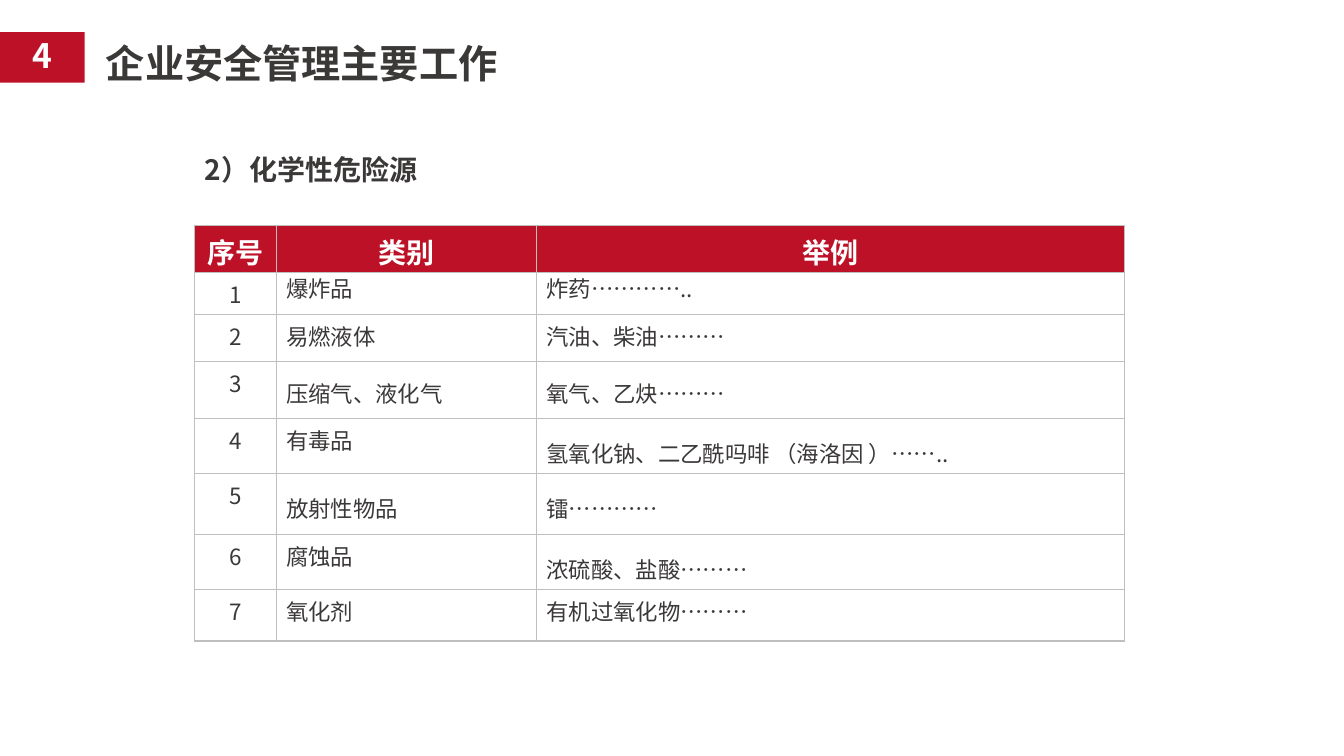
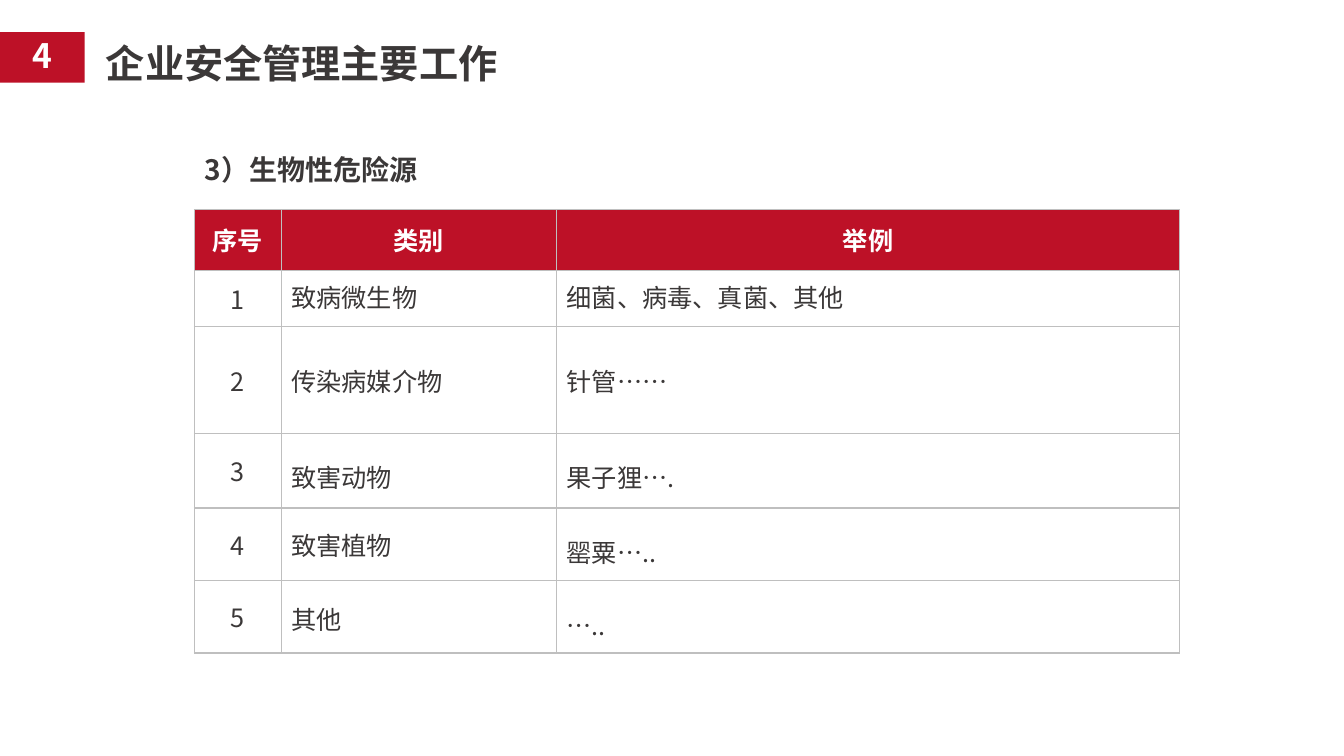
import dataclasses

import lxml.etree
import pptx
import pptx.dml.color
import pptx.enum.shapes
import pptx.enum.text
import pptx.oxml.ns
import pptx.util

Inches = pptx.util.Inches
Align = pptx.enum.text.PP_ALIGN
Anchor = pptx.enum.text.MSO_ANCHOR
qn = pptx.oxml.ns.qn


@dataclasses.dataclass(frozen=True)
class Theme:
    font: str = "Noto Sans CJK SC"
    red: str = "BD1127"
    ink: str = "3B3838"
    white: str = "FFFFFF"
    rule: str = "BFBFBF"
    title: int = 28
    badge: int = 24
    head: int = 20
    line: int = 1


THEME = Theme()
TITLE = "企业安全管理主要工作"
PART = "4"
HEADS = ("序号", "类别", "举例")

SLIDES = (
    dict(
        head="2）化学性危险源",
        box=(1.93, 2.24), cols=(0.81, 2.58, 5.83),
        sizes=(20, 16), top=0.46, foot=0, anchor=Anchor.TOP,
        rows=(
            (0.42, ("爆炸品", 0.8), ("炸药…………..", 0.8)),
            (0.47, ("易燃液体", 1), ("汽油、柴油………", 1)),
            (0.56, ("压缩气、液化气", 1.3), ("氧气、乙炔………", 1.3)),
            (0.55, ("有毒品", 1), ("氢氧化钠、二乙酰吗啡 （海洛因 ）……..", 1.4)),
            (0.6, ("放射性物品", 1.4), ("镭…………", 1.4)),
            (0.55, ("腐蚀品", 1), ("浓硫酸、盐酸………", 1.4)),
            (0.51, ("氧化剂", 1), ("有机过氧化物………", 1)),
        ),
    ),
    dict(
        head="3）生物性危险源",
        box=(1.93, 2.08), cols=(0.86, 2.73, 6.18),
        sizes=(18, 18), top=0.6, foot=0.05, anchor=Anchor.MIDDLE,
        rows=(
            (0.56, ("致病微生物", 0.8), ("细菌、病毒、真菌、其他", 0.8)),
            (1.06, ("传染病媒介物", 1), ("针管……", 1)),
            (0.74, ("致害动物", 1.3), ("果子狸….", 1.3)),
            (0.72, ("致害植物", 1), ("罂粟…..", 1.4)),
            (0.72, ("其他", 1.1), ("…..", 1.4)),
        ),
    ),
)


def color(code):
    return pptx.dml.color.RGBColor.from_string(code)


def write(frame, text, size, ink, bold=False, align=Align.LEFT, gap=1):
    frame.text = text
    para = frame.paragraphs[0]
    para.alignment = align
    para.line_spacing = gap
    para.space_before = pptx.util.Pt(0)
    for run in para.runs:
        font = run.font
        font.name, font.size, font.bold = THEME.font, pptx.util.Pt(size), bold
        font.color.rgb = color(ink)
        east = lxml.etree.SubElement(run._r.get_or_add_rPr(), qn("a:ea"))
        east.set("typeface", THEME.font)


def fit(frame, foot=0):
    frame.auto_size = pptx.enum.text.MSO_AUTO_SIZE.NONE
    frame.word_wrap = True
    frame.vertical_anchor = Anchor.MIDDLE
    frame.margin_left = frame.margin_right = Inches(0.1)
    frame.margin_top, frame.margin_bottom = 0, Inches(foot)


def place(shape, left, top, width, height):
    shape.left, shape.top = Inches(left), Inches(top)
    shape.width, shape.height = Inches(width), Inches(height)


def band(slide, left, top):
    title = slide.shapes.title
    place(title, left + 0.95, top + 0.02, 4.71, 0.57)
    fit(title.text_frame)
    write(title.text_frame, TITLE, THEME.title, THEME.ink, True)

    badge = slide.shapes.add_shape(
        pptx.enum.shapes.MSO_SHAPE.RECTANGLE,
        Inches(left), Inches(top), Inches(0.84), Inches(0.5))
    badge.shadow.inherit = False
    badge.fill.solid()
    badge.fill.fore_color.rgb = color(THEME.red)
    badge.line.fill.background()
    fit(badge.text_frame, 0.05)
    write(badge.text_frame, PART, THEME.badge, THEME.white, True, Align.CENTER)


def label(slide, text, left, top, width, height):
    box = slide.shapes.add_textbox(
        Inches(left), Inches(top), Inches(width), Inches(height))
    fit(box.text_frame)
    write(box.text_frame, text, THEME.head, THEME.ink, True)


def paint(cell, fill):
    props = cell._tc.get_or_add_tcPr()
    for side in ("a:lnL", "a:lnR", "a:lnT", "a:lnB"):
        edge = lxml.etree.SubElement(props, qn(side))
        edge.set("w", str(pptx.util.Pt(THEME.line)))
        solid = lxml.etree.SubElement(edge, qn("a:solidFill"))
        lxml.etree.SubElement(solid, qn("a:srgbClr")).set("val", THEME.rule)
    cell.fill.solid()
    cell.fill.fore_color.rgb = color(fill)


def grid(slide, data):
    left, top = data["box"]
    cols, rows = data["cols"], data["rows"]
    highs = [data["top"]] + [row[0] for row in rows]
    table = slide.shapes.add_table(
        len(highs), len(cols), Inches(left), Inches(top),
        Inches(sum(cols)), Inches(sum(highs))).table
    table.horz_banding = False
    for col, width in zip(table.columns, cols):
        col.width = Inches(width)
    for row, high in zip(table.rows, highs):
        row.height = Inches(high)

    lines = [[(text, 1) for text in HEADS]]
    lines += [[(str(num), 1), *row[1:]] for num, row in enumerate(rows, 1)]
    big, small = data["sizes"]
    for r, line in enumerate(lines):
        first = r == 0
        for c, (text, gap) in enumerate(line):
            cell = table.cell(r, c)
            cell.vertical_anchor = data["anchor"]
            if first:
                cell.margin_bottom = Inches(data["foot"])
            paint(cell, THEME.red if first else THEME.white)
            write(cell.text_frame, text, big if first else small,
                  THEME.white if first else THEME.ink, first,
                  Align.CENTER if first or c == 0 else Align.LEFT, gap)


def build(deck, data):
    slide = deck.slides.add_slide(deck.slide_layouts.get_by_name("Title Only"))
    band(slide, 0, 0.32)
    label(slide, data["head"], 1.93, 1.41, 3.39, 0.54)
    grid(slide, data)


def main():
    deck = pptx.Presentation()
    deck.slide_width, deck.slide_height = Inches(13.33), Inches(7.5)
    for data in SLIDES:
        build(deck, data)
    deck.save("out.pptx")


if __name__ == "__main__":
    main()
